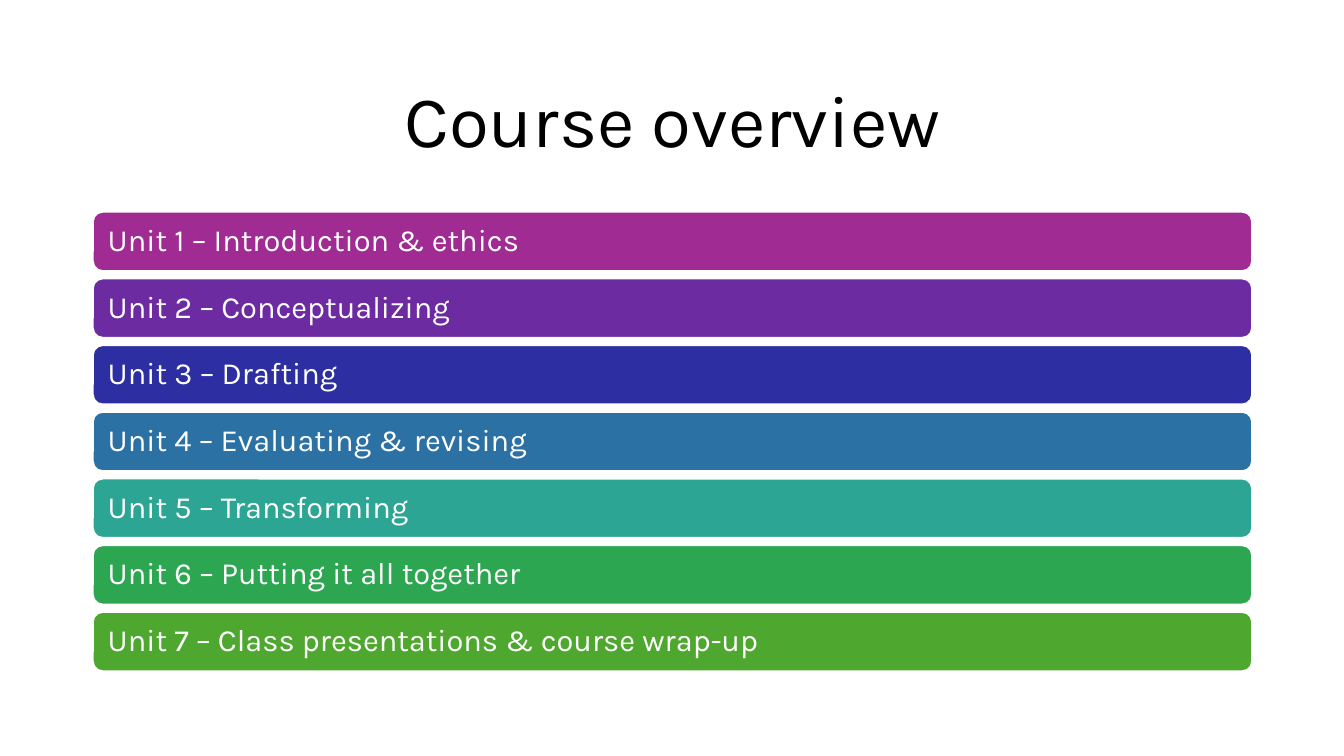
from dataclasses import dataclass

import pptx
import pptx.dml.color
import pptx.enum.shapes
import pptx.enum.text
import pptx.util

Inches = pptx.util.Inches
Align = pptx.enum.text.PP_ALIGN


@dataclass(frozen=True)
class Theme:
    font: str = "Karla"
    title_size: int = 52
    unit_size: int = 22
    dark: str = "000000"
    light: str = "FFFFFF"
    bars: tuple = ("A02B93", "6C2BA1", "2C2EA2", "2C71A4", "2DA594", "2DA651", "4EA72E")


UNITS = [
    "Introduction & ethics",
    "Conceptualizing",
    "Drafting",
    "Evaluating & revising",
    "Transforming",
    "Putting it all together",
    "Class presentations & course wrap-up",
]
LEFT, WIDTH = 0.92, 11.5
FIRST_TOP, LAST_TOP, BAR_HEIGHT = 2.1, 6.07, 0.59


def rgb(value):
    return pptx.dml.color.RGBColor.from_string(value)


def write_text(shape, text, *, font, size, color, align=Align.LEFT, inset=0.1):
    frame = shape.text_frame
    frame.word_wrap = True
    frame.vertical_anchor = pptx.enum.text.MSO_ANCHOR.MIDDLE
    frame.margin_left = frame.margin_right = Inches(inset)
    para = frame.paragraphs[0]
    para.alignment = align
    para.line_spacing = 0.9
    span = para.add_run()
    span.text = text
    span.font.name = font
    span.font.size = pptx.util.Pt(size)
    span.font.color.rgb = rgb(color)


class SlideBuilder:
    def __init__(self, slide, theme):
        self.slide = slide
        self.theme = theme

    def title(self, text, left, top, width, height):
        box = self.slide.shapes.add_textbox(
            Inches(left), Inches(top), Inches(width), Inches(height))
        write_text(box, text, font=self.theme.font, size=self.theme.title_size,
                   color=self.theme.dark, align=Align.CENTER)

    def bar(self, text, fill, left, top, width, height):
        bar = self.slide.shapes.add_shape(
            pptx.enum.shapes.MSO_SHAPE.ROUNDED_RECTANGLE,
            Inches(left), Inches(top), Inches(width), Inches(height))
        bar.shadow.inherit = False
        bar.fill.solid()
        bar.fill.fore_color.rgb = rgb(fill)
        bar.line.color.rgb = rgb(self.theme.light)
        bar.line.width = pptx.util.Pt(1.5)
        write_text(bar, text, font=self.theme.font, size=self.theme.unit_size,
                   color=self.theme.light, inset=0.12)


def main():
    deck = pptx.Presentation()
    deck.slide_width, deck.slide_height = Inches(13.33), Inches(7.5)
    theme = Theme()
    builder = SlideBuilder(deck.slides.add_slide(deck.slide_layouts[6]), theme)

    builder.title("Course overview", LEFT, 0.61, WIDTH, 1.24)
    pitch = (LAST_TOP - FIRST_TOP) / (len(UNITS) - 1)
    for index, (unit, fill) in enumerate(zip(UNITS, theme.bars)):
        builder.bar(f"Unit {index + 1} – {unit}", fill,
                    LEFT, FIRST_TOP + index * pitch, WIDTH, BAR_HEIGHT)

    deck.save("out.pptx")


if __name__ == "__main__":
    main()
